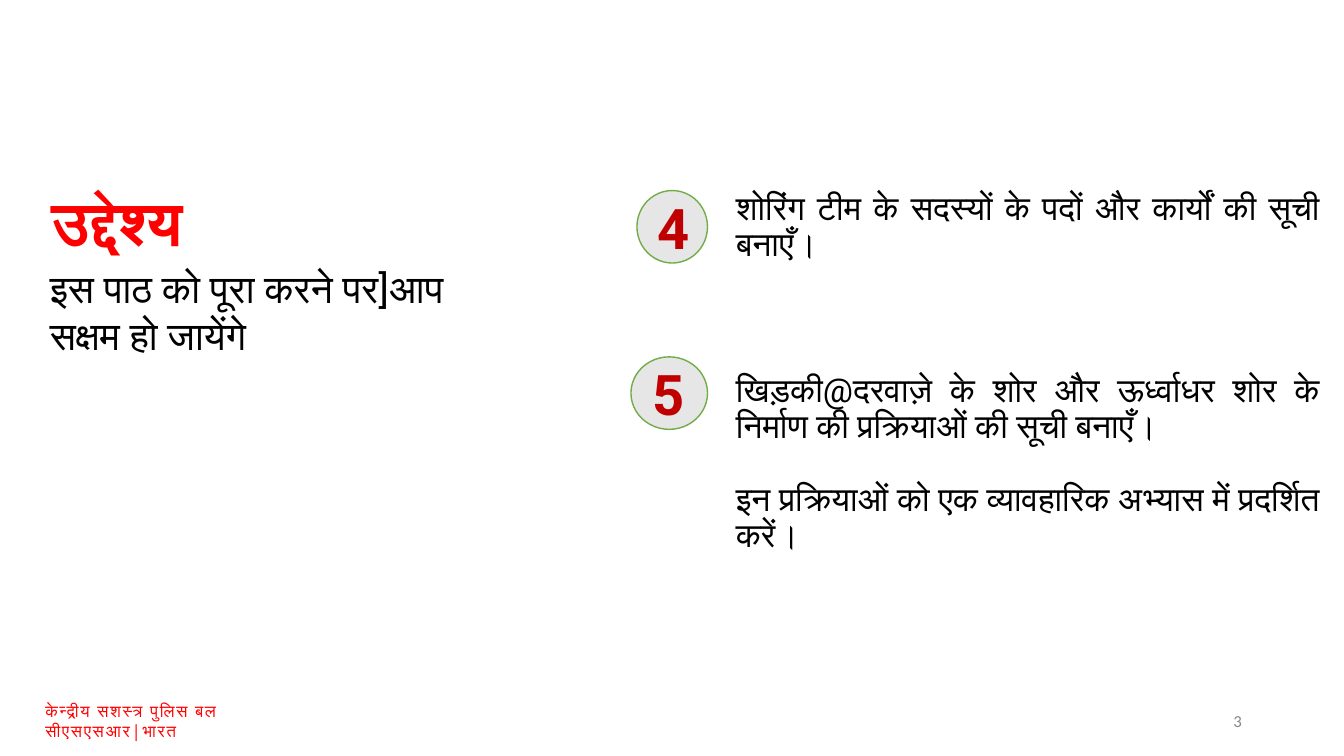
from lxml.etree import SubElement
from pptx import Presentation
from pptx.dml.color import RGBColor
from pptx.enum.shapes import MSO_SHAPE
from pptx.enum.text import MSO_ANCHOR, MSO_AUTO_SIZE, PP_ALIGN
from pptx.oxml.ns import qn
from pptx.util import Pt


def color(value):
    return RGBColor.from_string(value)


def write(shape, box, lines, paragraph_format, font_format, frame_format):
    shape.left, shape.top, shape.width, shape.height = [Pt(length) for length in box]
    frame = shape.text_frame
    frame.text = "\n".join(lines)
    frame.word_wrap = True
    frame.auto_size = MSO_AUTO_SIZE.NONE
    for name, value in frame_format.items():
        setattr(frame, name, value)
    for paragraph in frame.paragraphs:
        for name, value in paragraph_format.items():
            setattr(paragraph, name, value)
        for run in paragraph.runs:
            for name, value in font_format.items():
                if name == "color":
                    run.font.color.rgb = color(value)
                else:
                    setattr(run.font, name, value)


presentation = Presentation()
presentation.slide_width = Pt(960)
presentation.slide_height = Pt(540)
slide = presentation.slides.add_slide(presentation.slide_layouts[1])
shapes = slide.shapes

justified = {"alignment": PP_ALIGN.JUSTIFY}
tight = {"alignment": PP_ALIGN.JUSTIFY, "line_spacing": 0.9, "space_before": Pt(0)}
middle = {"vertical_anchor": MSO_ANCHOR.MIDDLE}

write(shapes.title, (29.5, 126.7, 351.4, 68.4), ["उद्देश्य"], tight,
      {"name": "Roboto", "size": Pt(44), "bold": True, "color": "FF0000"}, middle)

objectives = slide.placeholders[1]
objective_gaps = {
    "शोरिंग टीम के सदस्यों के पदों और कार्यों की सूची बनाएँ।": 0,
    "खिड़की@दरवाज़े के शोर और ऊर्ध्वाधर शोर के निर्माण की प्रक्रियाओं की सूची बनाएँ।": 78,
    "इन प्रक्रियाओं को एक व्यावहारिक अभ्यास में प्रदर्शित करें।": 26,
}
write(objectives, (518.4, 107.3, 431.3, 356.4), objective_gaps, tight,
      {"name": "Roboto", "size": Pt(24), "color": "000000"},
      {"vertical_anchor": MSO_ANCHOR.TOP, "margin_top": Pt(29.6)})
for paragraph, gap in zip(objectives.text_frame.paragraphs, objective_gaps.values()):
    properties = paragraph._p.get_or_add_pPr()
    properties.set("marL", "0")
    properties.set("indent", "0")
    SubElement(properties, qn("a:buNone"))
    paragraph.space_before = Pt(gap)

for number, left, top, width in (("4", 455, 136.1, 50.4), ("5", 450.7, 254.9, 54.7)):
    circle = shapes.add_shape(MSO_SHAPE.OVAL, Pt(left), Pt(top), Pt(width), Pt(51.8))
    circle.shadow.inherit = False
    circle.fill.solid()
    circle.fill.fore_color.rgb = color("E7E6E6")
    circle.line.color.rgb = color("70AD47")
    circle.line.width = Pt(1)
    write(circle, (left, top, width, 51.8), [number], justified,
          {"name": "Roboto", "size": Pt(40), "bold": True, "color": "C00000"}, middle)

introduction = shapes.add_textbox(0, 0, 0, 0)
write(introduction, (21.6, 185, 377.3, 74.9),
      ["इस पाठ को पूरा करने पर]आप", "सक्षम हो जायेंगे"], justified,
      {"name": "Roboto", "size": Pt(28), "color": "000000"}, {"margin_left": Pt(14)})

footer = shapes.add_textbox(0, 0, 0, 0)
footer_margins = {f"margin_{side}": Pt(2.9) for side in ("left", "top", "right", "bottom")}
write(footer, (29.5, 497.5, 182.9, 20.9), ["केन्द्रीय सशस्त्र पुलिस बल सीएसएसआर|भारत"], {},
      {"name": "Open Sans", "size": Pt(12), "color": "FF0000"}, footer_margins)
footer.text_frame.paragraphs[0].runs[0]._r.get_or_add_rPr().set("spc", "120")

page_number = shapes.add_textbox(0, 0, 0, 0)
write(page_number, (678.2, 500.4, 216, 28.8), ["3"], {"alignment": PP_ALIGN.RIGHT},
      {"name": "Calibri", "size": Pt(12), "color": "888888"}, middle)

presentation.save("out.pptx")
